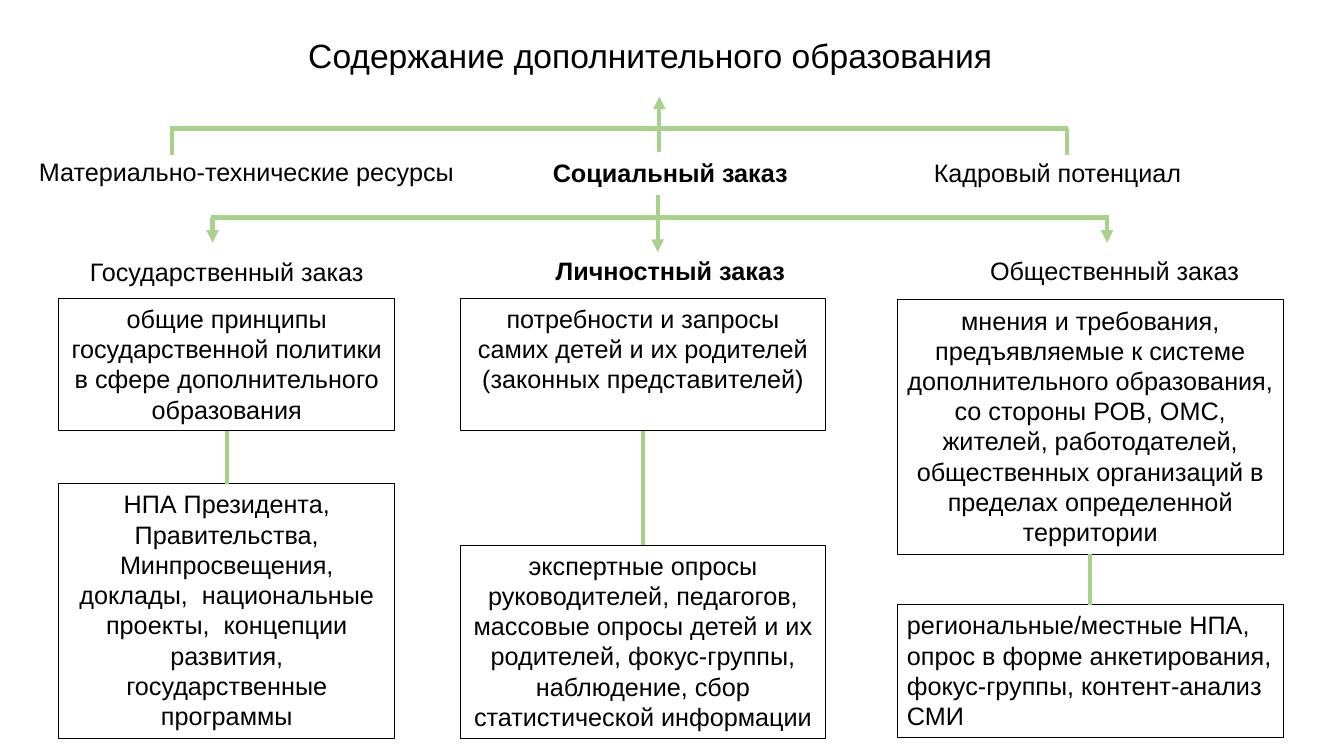
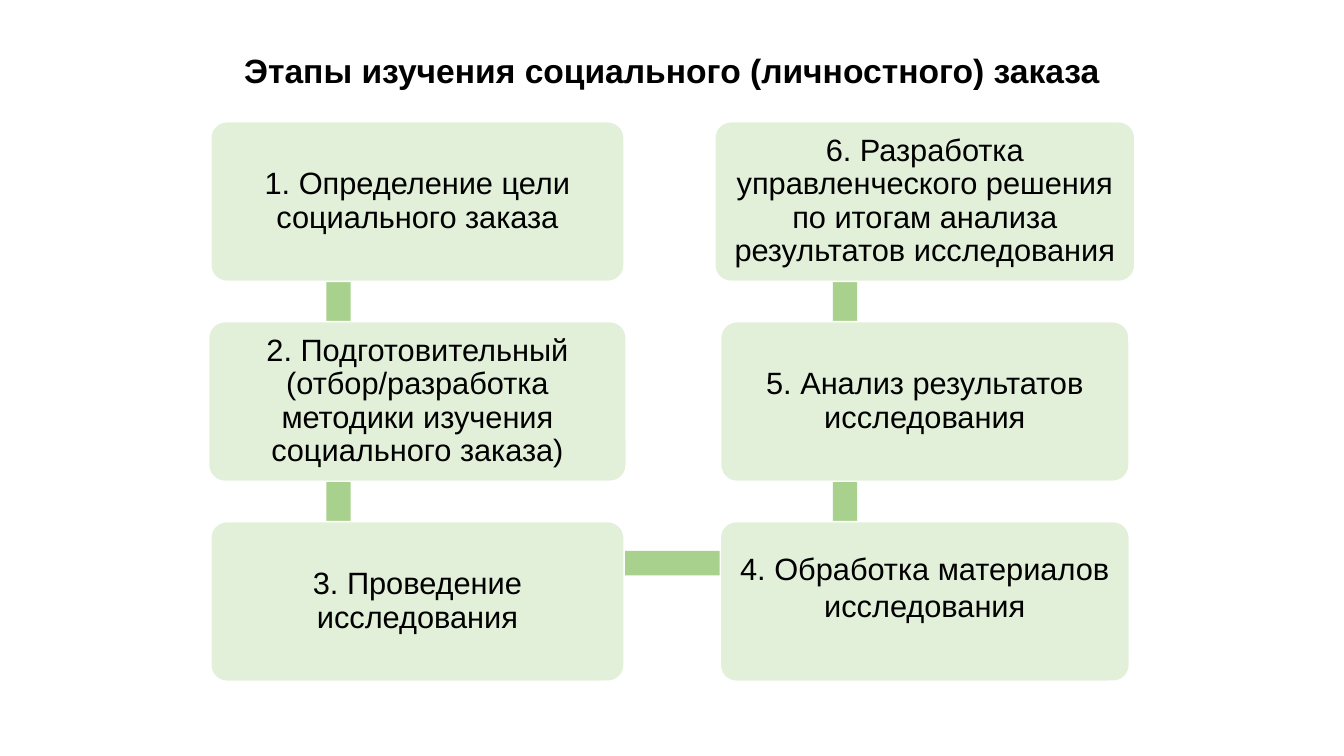
from dataclasses import dataclass

from pptx import Presentation
from pptx.dml.color import RGBColor
from pptx.enum.shapes import MSO_CONNECTOR, MSO_SHAPE
from pptx.enum.text import MSO_ANCHOR, MSO_AUTO_SIZE, PP_ALIGN
from pptx.oxml.ns import qn
from pptx.util import Emu, Inches, Pt
from lxml.etree import SubElement

FONT = "Arial"
COLORS = {"text": "000000", "green": "A9D18E", "card": "E2F0D9", "white": "FFFFFF"}
WIDTH, HEIGHT = Inches(13.333), Inches(7.5)
COLS, ROWS = 160, 90


@dataclass(frozen=True)
class Area:
    """A rectangle in grid columns and rows."""
    col: float
    row: float
    cols: float
    rows: float

    @property
    def center(self) -> float:
        return self.col + self.cols / 2

    @property
    def bottom(self) -> float:
        return self.row + self.rows

    def emu(self) -> tuple:
        return x(self.col), y(self.row), x(self.cols), y(self.rows)


@dataclass(frozen=True)
class Heading:
    text: str
    area: Area
    bold: bool = False


@dataclass(frozen=True)
class OrderColumn:
    """Two linked boxes: what the order expresses and where it is found."""
    meaning: str
    top: Area
    sources: str
    low: Area
    low_align: PP_ALIGN = PP_ALIGN.CENTER


@dataclass(frozen=True)
class Stage:
    text: str
    side: int
    level: int
    cols: float
    spacing: float = 0.9
    lift: float = 0


HEADINGS = [
    Heading("Материально-технические ресурсы", Area(2, 18, 54.7, 4.8)),
    Heading("Социальный заказ", Area(58.8, 18.1, 42, 4.8), True),
    Heading("Кадровый потенциал", Area(106.8, 18.1, 38.2, 4.8)),
    Heading("Государственный заказ", Area(7, 29.9, 40, 4.8)),
    Heading("Личностный заказ", Area(54.8, 29.8, 50, 4.8), True),
    Heading("Общественный заказ", Area(112.7, 29.8, 40, 4.8)),
]

ORDERS = [
    OrderColumn(
        "общие принципы государственной политики в сфере дополнительного образования",
        Area(7, 35.5, 40, 15.8),
        "НПА Президента, Правительства, Минпросвещения, доклады,  национальные "
        "проекты,  концепции развития, государственные программы",
        Area(7, 57.6, 40, 30.3)),
    OrderColumn(
        "потребности и запросы самих детей и их родителей (законных представителей)",
        Area(54.8, 35.5, 43.5, 15.8),
        "экспертные опросы руководителей, педагогов, массовые опросы детей и их "
        "родителей, фокус-группы, наблюдение, сбор статистической информации",
        Area(54.8, 64.9, 43.5, 23)),
    OrderColumn(
        "мнения и требования, предъявляемые к системе дополнительного образования, "
        "со стороны РОВ, ОМС, жителей, работодателей, общественных организаций "
        "в пределах определенной территории",
        Area(106.8, 35.7, 46, 30.3),
        "региональные/местные НПА, опрос в форме анкетирования, фокус-группы, "
        "контент-анализ СМИ",
        Area(106.8, 72, 46, 15.8), PP_ALIGN.LEFT),
]

STAGES = [
    Stage("1. Определение цели социального заказа", 0, 0, 49.2),
    Stage("2. Подготовительный (отбор/разработка методики изучения "
          "социального заказа)", 0, 1, 49.7),
    Stage("3. Проведение исследования", 0, 2, 49.2),
    Stage("4. Обработка материалов исследования", 1, 2, 48.7, 1, 3.6),
    Stage("5. Анализ результатов исследования", 1, 1, 48.6),
    Stage("6. Разработка управленческого решения по итогам анализа "
          "результатов исследования", 1, 0, 50),
]
SIDE_CENTERS = (49.7, 110.1)
BAR_CENTERS = (40.3, 100.6)
BAR = 2.9
CARD_TOP, CARD_ROWS, LEVEL_STEP = 14.5, 19, 23.8


def x(cols: float) -> Emu:
    return Emu(round(WIDTH * cols / COLS))


def y(rows: float) -> Emu:
    return Emu(round(HEIGHT * rows / ROWS))


def rgb(name: str) -> RGBColor:
    return RGBColor.from_string(COLORS[name])


def write(tf, text: str, size: float, bold: bool = False,
          align: PP_ALIGN = PP_ALIGN.CENTER, anchor: MSO_ANCHOR = MSO_ANCHOR.TOP,
          spacing: float = 1) -> None:
    tf.word_wrap = True
    tf.auto_size = MSO_AUTO_SIZE.NONE
    tf.vertical_anchor = anchor
    p = tf.paragraphs[0]
    p.alignment, p.line_spacing = align, spacing
    r = p.add_run()
    r.text = text
    r.font.name, r.font.size, r.font.bold = FONT, Pt(size), bold
    r.font.color.rgb = rgb("text")


def add_titled_slide(prs, text: str, area: Area, bold: bool, spacing: float):
    s = prs.slides.add_slide(prs.slide_layouts[5])
    sp = s.shapes.title
    sp.left, sp.top, sp.width, sp.height = area.emu()
    write(sp.text_frame, text, 24, bold, anchor=MSO_ANCHOR.MIDDLE, spacing=spacing)
    return s


def add_box(s, area: Area, fill: str = "", line: str = "", width: float = 1,
            kind: MSO_SHAPE = MSO_SHAPE.RECTANGLE):
    sp = s.shapes.add_shape(kind, *area.emu())
    sp.shadow.inherit = False
    if fill:
        sp.fill.solid()
        sp.fill.fore_color.rgb = rgb(fill)
    else:
        sp.fill.background()
    if line:
        sp.line.color.rgb = rgb(line)
        sp.line.width = Pt(width)
    else:
        sp.line.fill.background()
    return sp


def add_line(s, x1: float, y1: float, x2: float, y2: float, arrow: bool = False) -> None:
    cn = s.shapes.add_connector(MSO_CONNECTOR.STRAIGHT, x(x1), y(y1), x(x2), y(y2))
    cn.line.color.rgb = rgb("green")
    cn.line.width = Pt(3)
    sp_pr = cn._element.spPr
    if arrow:
        SubElement(sp_pr.find(qn("a:ln")), qn("a:tailEnd"), type="triangle")
    SubElement(sp_pr, qn("a:effectLst"))


def add_bracket(s, left: float, right: float, row: float, leg_end: float,
                stem: tuple[float, float, float], leg_arrows: bool) -> None:
    """Draw a bar with two legs and an arrow crossing it (column, start, end)."""
    add_line(s, left - 0.2, row, right + 0.2, row)
    for col in (left, right):
        add_line(s, col, row, col, leg_end, leg_arrows)
    col, start, end = stem
    add_line(s, col, start, col, end, True)


def add_order(s, order: OrderColumn) -> None:
    for text, area, align in ((order.meaning, order.top, PP_ALIGN.CENTER),
                              (order.sources, order.low, order.low_align)):
        sp = add_box(s, area, line="text", width=0.75)
        write(sp.text_frame, text, 18, align=align)
    add_line(s, order.top.center, order.top.bottom, order.top.center, order.low.row)


def add_stage(s, stage: Stage) -> None:
    area = Area(SIDE_CENTERS[stage.side] - stage.cols / 2,
                CARD_TOP + LEVEL_STEP * stage.level, stage.cols, CARD_ROWS)
    sp = add_box(s, area, "card", "white", kind=MSO_SHAPE.ROUNDED_RECTANGLE)
    sp.adjustments[0] = 0.1
    tf = sp.text_frame
    tf.margin_left = tf.margin_right = tf.margin_top = y(0.5)
    tf.margin_bottom = y(0.5 + stage.lift)
    write(tf, stage.text, 22, anchor=MSO_ANCHOR.MIDDLE, spacing=stage.spacing)


def build_content_slide(prs) -> None:
    s = add_titled_slide(prs, "Содержание дополнительного образования",
                         Area(27.4, 3.5, 100, 6), False, 1)
    for heading in HEADINGS:
        tb = s.shapes.add_textbox(*heading.area.emu())
        write(tb.text_frame, heading.text, 18, heading.bold)
    add_bracket(s, 20.5, 127, 15.3, 18.4, (78.5, 18.1, 11.5), False)
    add_bracket(s, 25.3, 131.8, 25.9, 28.9, (78.3, 23.2, 30), True)
    for order in ORDERS:
        add_order(s, order)


def build_stages_slide(prs) -> None:
    s = add_titled_slide(prs, "Этапы изучения социального (личностного) заказа",
                         Area(11, 4.8, 138, 7.6), True, 0.9)
    left, right = BAR_CENTERS
    bars = [Area(center - BAR / 2, 19.3 + LEVEL_STEP * level, BAR, 23.6)
            for center in BAR_CENTERS for level in range(2)]
    bars.append(Area(left, 65.6, right - left, BAR))
    for bar in bars:
        add_box(s, bar, "green")
    for stage in STAGES:
        add_stage(s, stage)


def main() -> None:
    prs = Presentation()
    prs.slide_width, prs.slide_height = WIDTH, HEIGHT
    build_content_slide(prs)
    build_stages_slide(prs)
    prs.save("out.pptx")


if __name__ == "__main__":
    main()
